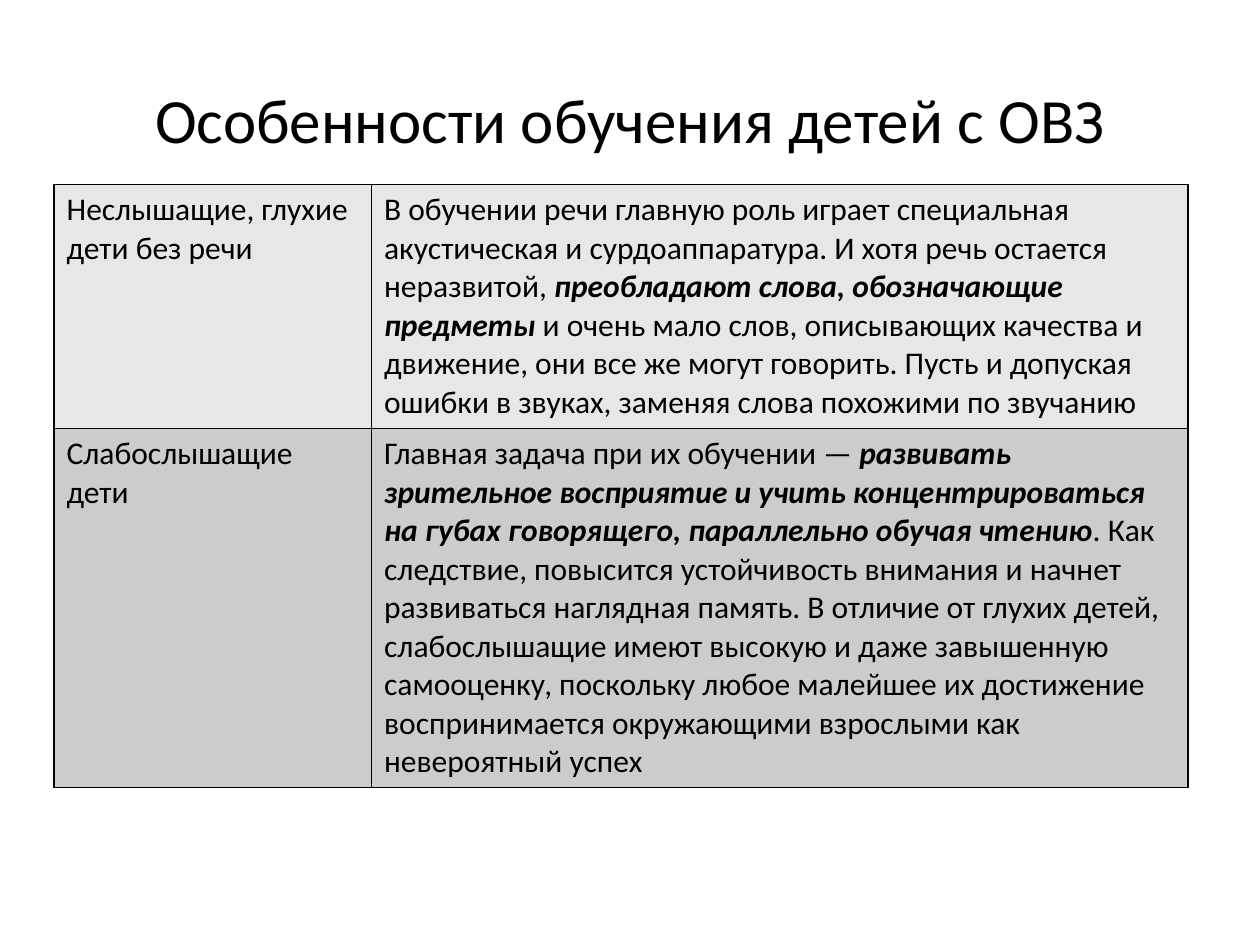
"""Build a slide with a two-row table on teaching children with hearing loss."""
from dataclasses import dataclass

from lxml import etree
from pptx import Presentation
from pptx.dml.color import RGBColor
from pptx.enum.text import MSO_ANCHOR, PP_ALIGN
from pptx.oxml.ns import qn
from pptx.slide import Slide
from pptx.table import _Cell
from pptx.util import Cm, Pt

MIDDLE = MSO_ANCHOR.MIDDLE
CENTER = PP_ALIGN.CENTER
BLACK = RGBColor(0x00, 0x00, 0x00)
LIGHT = RGBColor(0xE7, 0xE7, 0xE7)
GRAY = RGBColor(0xCC, 0xCC, 0xCC)
FONT = "Calibri"
WIDTHS = (Cm(6.4), Cm(16.46))


@dataclass
class Part:
    text: str
    strong: bool = False


@dataclass
class Group:
    name: Part
    notes: list[Part]
    fill: RGBColor
    height: int


GROUPS = [
    Group(
        Part("Неслышащие, глухие дети без речи"),
        [
            Part("В обучении речи главную роль играет специальная акустическая "
                 "и сурдоаппаратура. И хотя речь остается неразвитой, "),
            Part("преобладают слова, обозначающие предметы", True),
            Part(" и очень мало слов, описывающих качества и движение, они все же "
                 "могут говорить. Пусть и допуская ошибки в звуках, заменяя слова "
                 "похожими по звучанию"),
        ],
        LIGHT, Cm(4.92),
    ),
    Group(
        Part("Слабослышащие дети"),
        [
            Part("Главная задача при их обучении — "),
            Part("развивать зрительное восприятие и учить концентрироваться "
                 "на губах говорящего, параллельно обучая чтению", True),
            Part(". Как следствие, повысится устойчивость внимания и начнет "
                 "развиваться наглядная память. В отличие от глухих детей, "
                 "слабослышащие имеют высокую и даже завышенную самооценку, "
                 "поскольку любое малейшее их достижение воспринимается "
                 "окружающими взрослыми как невероятный успех"),
        ],
        GRAY, Cm(7.24),
    ),
]


def style(para, size: int) -> None:
    font = para.font
    font.name, font.size = FONT, Pt(size)
    font.color.rgb = BLACK


def border(cell: _Cell) -> None:
    props = cell._tc.get_or_add_tcPr()
    for side in ("lnL", "lnR", "lnT", "lnB"):
        line = etree.SubElement(props, qn(f"a:{side}"), w=str(Pt(1)))
        fill = etree.SubElement(line, qn("a:solidFill"))
        etree.SubElement(fill, qn("a:srgbClr"), val=str(BLACK))


def write(cell: _Cell, parts: list[Part], fill: RGBColor) -> None:
    border(cell)
    cell.fill.solid()
    cell.fill.fore_color.rgb = fill
    para = cell.text_frame.paragraphs[0]
    style(para, 18)
    for part in parts:
        run = para.add_run()
        run.text = part.text
        run.font.bold = run.font.italic = part.strong


def add_title(slide: Slide, text: str) -> None:
    box = slide.shapes.add_textbox(Cm(1.27), Cm(0.8), Cm(22.86), Cm(3.18))
    frame = box.text_frame
    frame.word_wrap = True
    frame.vertical_anchor = MIDDLE
    para = frame.paragraphs[0]
    para.text = text
    para.alignment = CENTER
    style(para, 36)


def add_grid(slide: Slide, groups: list[Group]) -> None:
    high = sum(group.height for group in groups)
    table = slide.shapes.add_table(
        len(groups), len(WIDTHS), Cm(1.09), Cm(3.72), sum(WIDTHS), high).table
    table.first_row = table.horz_banding = False
    for column, width in zip(table.columns, WIDTHS):
        column.width = width
    for index, group in enumerate(groups):
        table.rows[index].height = group.height
        write(table.cell(index, 0), [group.name], group.fill)
        write(table.cell(index, 1), group.notes, group.fill)


def main() -> None:
    deck = Presentation()
    deck.slide_width, deck.slide_height = Cm(25.4), Cm(19.05)
    slide = deck.slides.add_slide(deck.slide_layouts[6])
    add_title(slide, "Особенности обучения детей с ОВЗ")
    add_grid(slide, GROUPS)
    deck.save("out.pptx")


if __name__ == "__main__":
    main()
